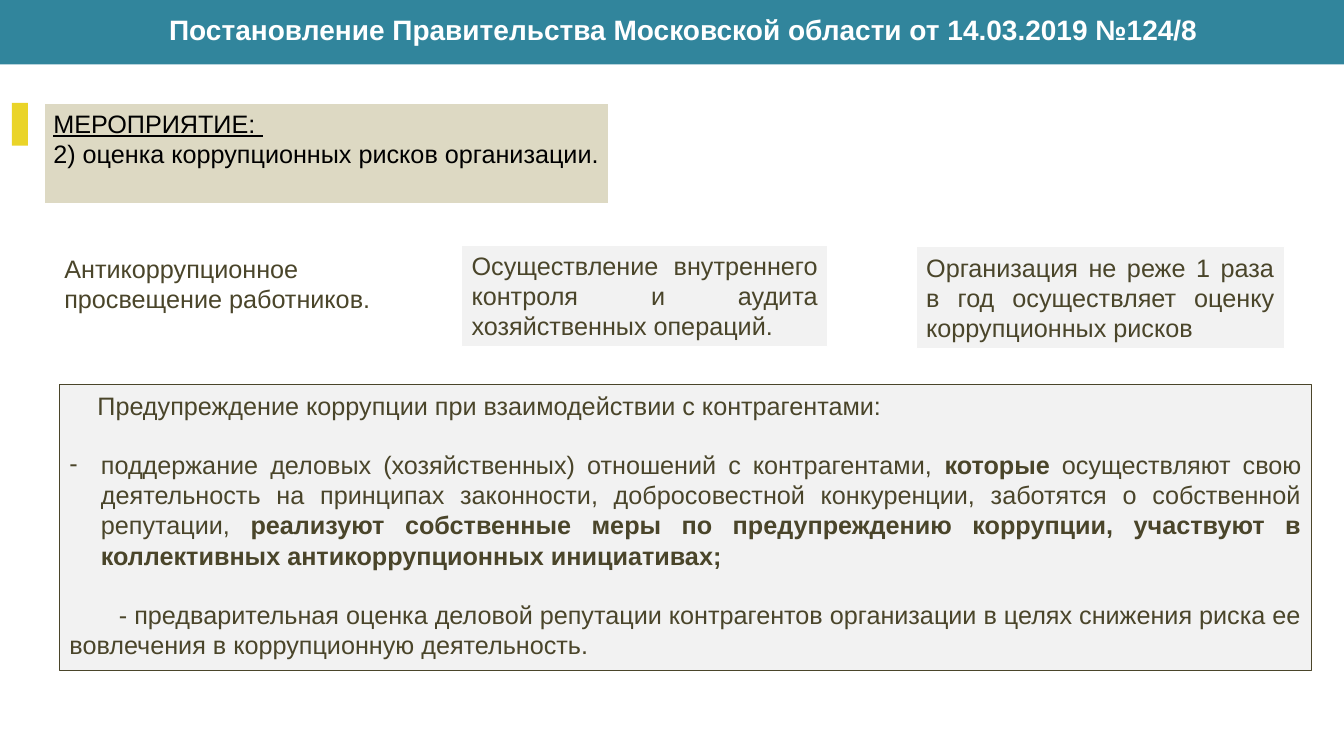
from pptx import Presentation
from pptx.dml.color import RGBColor
from pptx.enum.shapes import MSO_SHAPE
from pptx.enum.text import MSO_ANCHOR, PP_ALIGN
from pptx.oxml.ns import qn
from pptx.util import Pt
from lxml.etree import SubElement

COLORS = {
    "teal": "31859C",
    "yellow": "EAD428",
    "beige": "DDD9C3",
    "gray": "F2F2F2",
    "olive": "4A452A",
    "white": "FFFFFF",
    "black": "000000",
}


class SlideBuilder:
    font_name = "Arial"
    body_size = 18
    line_gap = 20.7

    def __init__(self, slide):
        self.slide = slide

    def color(self, name):
        return RGBColor.from_string(COLORS[name])

    def rectangle(self, left, top, width, height, fill=None, line=None, line_width=0.75):
        shape = self.slide.shapes.add_shape(
            MSO_SHAPE.RECTANGLE, Pt(left), Pt(top), Pt(width), Pt(height))
        shape.shadow.inherit = False
        if fill:
            shape.fill.solid()
            shape.fill.fore_color.rgb = self.color(fill)
        else:
            shape.fill.background()
        if line:
            shape.line.color.rgb = self.color(line)
            shape.line.width = Pt(line_width)
        else:
            shape.line.fill.background()
        frame = shape.text_frame
        frame.word_wrap = True
        frame.vertical_anchor = MSO_ANCHOR.TOP
        return shape

    def text_box(self, left, top, width, height):
        shape = self.slide.shapes.add_textbox(Pt(left), Pt(top), Pt(width), Pt(height))
        shape.text_frame.word_wrap = True
        return shape

    def set_text(self, shape, texts, color="olive", align=PP_ALIGN.JUSTIFY, size=body_size):
        frame = shape.text_frame
        frame.text = "\n".join(texts)
        for paragraph in frame.paragraphs:
            paragraph.alignment = align
            for run in paragraph.runs:
                self.style(run, color, size)
        return frame.paragraphs

    def style(self, run, color="olive", size=body_size, bold=False):
        run.font.name = self.font_name
        run.font.size = Pt(size)
        run.font.bold = bold
        run.font.color.rgb = self.color(color)

    def add_run(self, paragraph, text, bold):
        run = paragraph.add_run()
        run.text = text
        self.style(run, bold=bold)

    def indent(self, paragraph, first_line, left=0, bullet=None):
        properties = paragraph._p.get_or_add_pPr()
        properties.set("marL", str(Pt(left)))
        properties.set("indent", str(Pt(first_line)))
        if bullet:
            SubElement(properties, qn("a:buFont"), typeface=self.font_name)
            SubElement(properties, qn("a:buChar"), char=bullet)


def main():
    presentation = Presentation()
    presentation.slide_width = Pt(960)
    presentation.slide_height = Pt(540)
    builder = SlideBuilder(presentation.slides.add_slide(presentation.slide_layouts[6]))

    builder.rectangle(0, 0, 960, 46, "teal")
    title = builder.text_box(62, 10.8, 858, 24.5)
    heading, = builder.set_text(
        title, ["Постановление Правительства Московской области от 14.03.2019 №124/8 "],
        "white", PP_ALIGN.CENTER, 20)
    heading.line_spacing = 0.75
    heading.runs[0].font.bold = True

    event = builder.rectangle(31, 73.5, 404.7, 72.7, "beige", "white", 2.25)
    event_label, _ = builder.set_text(
        event, ["МЕРОПРИЯТИЕ: ", "2) оценка коррупционных рисков организации."],
        "black", PP_ALIGN.LEFT)
    event_label.runs[0].font.underline = True
    builder.rectangle(8.5, 73.5, 11.5, 30.5, "yellow")

    measures = [
        (38.9, 177.1, 253.4, 51, None, "Антикоррупционное просвещение работников. "),
        (329.8, 175, 261.4, 72.7, "gray",
         "Осуществление внутреннего контроля и аудита хозяйственных операций."),
        (654.5, 176.4, 262.8, 72.7, "gray",
         "Организация не реже 1 раза в год осуществляет оценку коррупционных рисков"),
    ]
    for left, top, width, height, fill, text in measures:
        builder.set_text(builder.rectangle(left, top, width, height, fill, "white"), [text])

    partners = builder.rectangle(42.5, 275, 894.2, 203.8, "gray", "olive")
    intro, support, assessment = builder.set_text(partners, [
        "Предупреждение коррупции при взаимодействии с контрагентами:",
        "поддержание деловых (хозяйственных) отношений с контрагентами, ",
        "- предварительная оценка деловой репутации контрагентов организации "
        "в целях снижения риска ее вовлечения в коррупционную деятельность.",
    ])
    for text, bold in [
        ("которые ", True),
        ("осуществляют свою деятельность на принципах законности, добросовестной "
         "конкуренции, заботятся о собственной репутации, ", False),
        ("реализуют собственные меры по предупреждению коррупции, участвуют "
         "в коллективных антикоррупционных инициативах;", True),
    ]:
        builder.add_run(support, text, bold)
    for paragraph in (support, assessment):
        paragraph.space_before = Pt(builder.line_gap)
    builder.indent(intro, 20)
    builder.indent(support, -22.5, 22.5, "-")
    builder.indent(assessment, 35.4)

    presentation.save("out.pptx")


if __name__ == "__main__":
    main()
